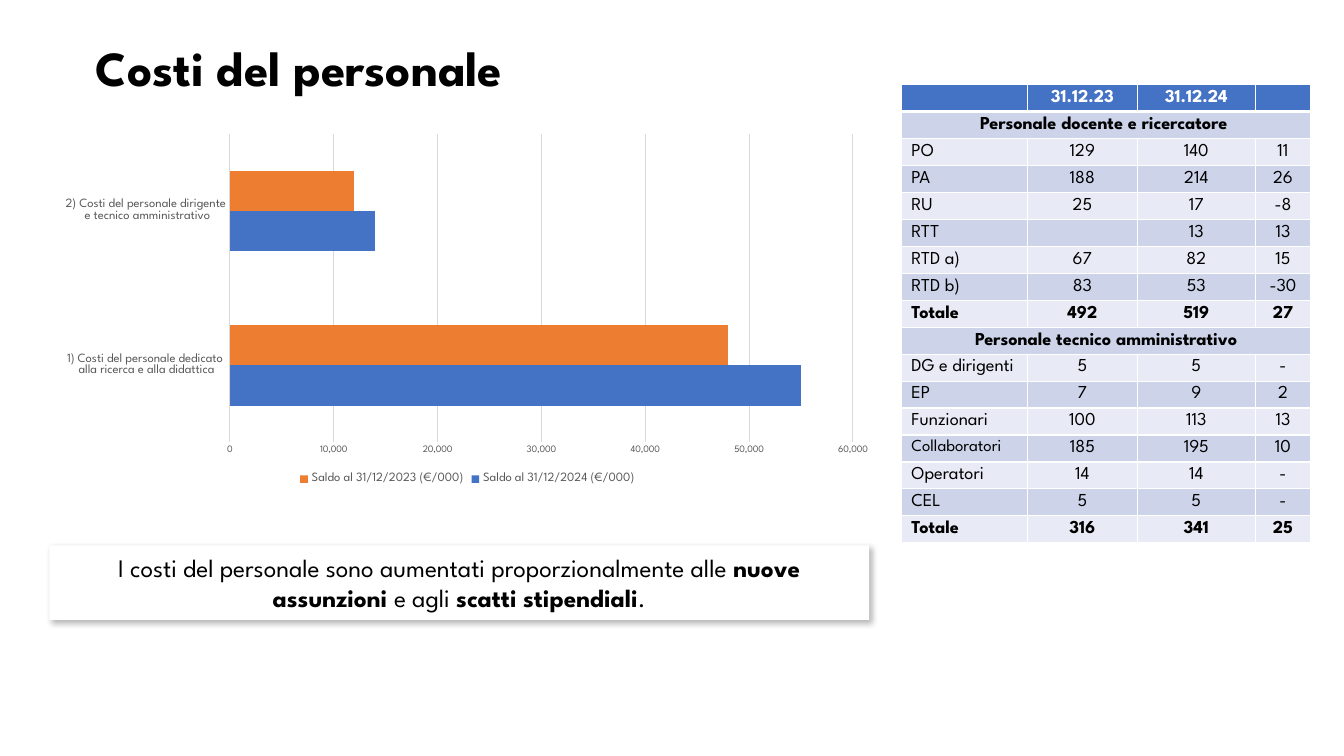
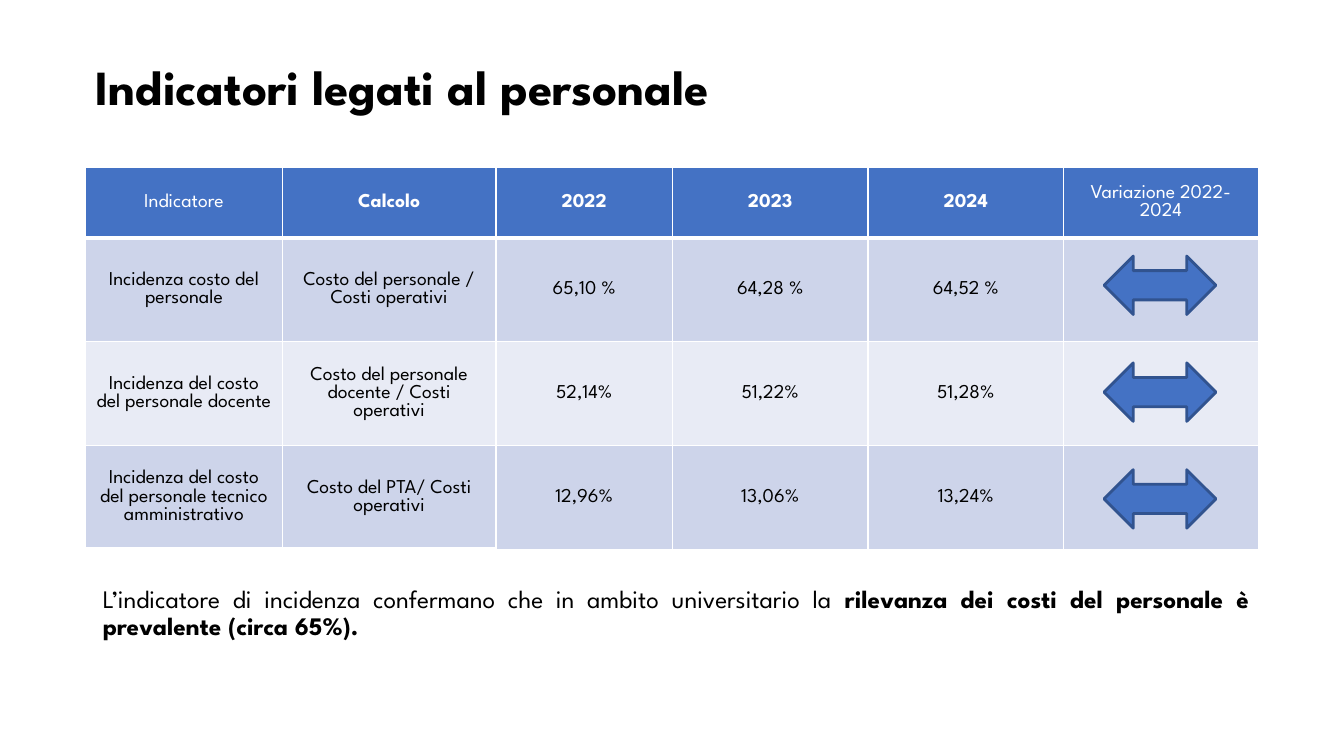
from lxml import etree
from pptx import Presentation
from pptx import util as u
from pptx.chart import data as cd
from pptx.dml import color as dc
from pptx.enum import chart as ec, shapes as es, text as et
from pptx.oxml import ns


class Theme:
    font = "League Spartan"
    black = dc.RGBColor.from_string("000000")
    white = dc.RGBColor.from_string("FFFFFF")
    blue = dc.RGBColor.from_string("4472C4")
    navy = dc.RGBColor.from_string("31538F")
    orange = dc.RGBColor.from_string("ED7D31")
    bands = [dc.RGBColor.from_string(c) for c in ("E8EBF5", "CDD4EA")]
    gray = dc.RGBColor.from_string("595959")
    rule = dc.RGBColor.from_string("D9D9D9")
    title, body, cell, small, label, tick = 35, 18, 14, 13, 9, 7


PX = u.Inches(1) // 100


def style(font, size, color=Theme.black, bold=None):
    font.name, font.size, font.bold = Theme.font, u.Pt(size), bold
    font.color.rgb = color


def grid(slide, left, top, widths, heights, rows, size, strong, mid):
    table = slide.shapes.add_table(
        len(rows), len(widths), left * PX, top * PX,
        sum(widths) * PX, sum(heights) * PX).table
    for col, width in zip(table.columns, widths):
        col.width = width * PX
    for r, row in enumerate(rows):
        table.rows[r].height = heights[r] * PX
        for c in range(len(widths)):
            cell = table.cell(r, c)
            cell.fill.solid()
            cell.fill.fore_color.rgb = Theme.bands[r % 2] if r else Theme.blue
            if mid:
                cell.vertical_anchor = et.MSO_ANCHOR.MIDDLE
            if r == 0 or (mid and r == len(rows) - 1 and c < 2):
                edge = etree.Element(ns.qn("a:lnB"), w=str(u.Pt(3)))
                paint = etree.SubElement(edge, ns.qn("a:solidFill"))
                etree.SubElement(paint, ns.qn("a:srgbClr"), val=str(Theme.white))
                cell._tc.tcPr.insert(0, edge)
            para = cell.text_frame.paragraphs[0]
            para.text = row[c] if c < len(row) else ""
            if mid or c or r == 0 or len(row) == 1:
                para.alignment = et.PP_ALIGN.CENTER
            fit = 12 if para.text == "Collaboratori" else size
            style(para.font, fit, Theme.white if r == 0 else Theme.black,
                  strong(r, c))
            if not para.text:
                etree.SubElement(para._p, ns.qn("a:endParaRPr"), sz=str(size * 100))
        if len(row) == 1:
            table.cell(r, 0).merge(table.cell(r, len(widths) - 1))


prs = Presentation()
prs.slide_width, prs.slide_height = 1333 * PX, 750 * PX

slides = []
for name, top in (("Costi del personale", 38), ("Indicatori legati al personale", 57)):
    slide = prs.slides.add_slide(prs.slide_layouts[5])
    title = slide.shapes.title
    title.left, title.top, title.width, title.height = (
        n * PX for n in (85, top, 1165, 109))
    frame = title.text_frame
    frame.text = name
    frame.auto_size = et.MSO_AUTO_SIZE.NONE
    frame.vertical_anchor = et.MSO_ANCHOR.TOP
    para = frame.paragraphs[0]
    para.alignment = et.PP_ALIGN.LEFT
    para.line_spacing = u.Pt(37.5)
    style(para.font, Theme.title, bold=True)
    slides.append(slide)
costs, ratios = slides

note = costs.shapes.add_shape(
    es.MSO_SHAPE.RECTANGLE, 49 * PX, 541 * PX, 813 * PX, 74 * PX)
note.fill.solid()
note.fill.fore_color.rgb = Theme.white
note.line.fill.background()
note.shadow.inherit = False
shade = etree.SubElement(
    note._element.spPr.find(ns.qn("a:effectLst")), ns.qn("a:outerShdw"),
    blurRad=str(u.Pt(4.5)), dist=str(u.Pt(2.6)), dir=str(53 * 60000),
    algn="tl", rotWithShape="0")
tint = etree.SubElement(shade, ns.qn("a:srgbClr"), val="000000")
etree.SubElement(tint, ns.qn("a:alpha"), val="27000")
note.text_frame.vertical_anchor = et.MSO_ANCHOR.MIDDLE

claim = ratios.shapes.add_textbox(73 * PX, 572 * PX, 1176 * PX, 75 * PX)
frame = claim.text_frame
frame.margin_left = 29 * PX
frame.margin_top = frame.margin_right = frame.margin_bottom = 10 * PX

for box, align, space, parts in (
    (note, et.PP_ALIGN.CENTER, 21.5, (
        "I costi del personale sono aumentati proporzionalmente alle ",
        "nuove assunzioni ", "e agli ", "scatti stipendiali", ".")),
    (claim, et.PP_ALIGN.JUSTIFY, 19.3, (
        "L’indicatore di incidenza confermano che in ambito universitario la ",
        "rilevanza dei costi del personale è prevalente (circa 65%).")),
):
    box.text_frame.word_wrap = True
    para = box.text_frame.paragraphs[0]
    para.alignment, para.line_spacing = align, u.Pt(space)
    for i, part in enumerate(parts):
        run = para.add_run()
        run.text = part
        style(run.font, Theme.body, bold=i % 2 == 1)

staff = [
    ("", "31.12.23", "31.12.24", ""),
    ("Personale docente e ricercatore ",),
    ("PO", "129", "140", "11"),
    ("PA", "188", "214", "26"),
    ("RU", "25", "17", "-8"),
    ("RTT", "", "13", "13"),
    ("RTD a)", "67", "82", "15"),
    ("RTD b)", "83", "53", "-30"),
    ("Totale", "492", "519", "27"),
    ("Personale tecnico amministrativo",),
    ("DG e dirigenti", "5", "5", "-"),
    ("EP", "7", "9", "2"),
    ("Funzionari", "100", "113", "13"),
    ("Collaboratori", "185", "195", "10"),
    ("Operatori", "14", "14", "-"),
    ("CEL", "5", "5", "-"),
    ("Totale", "316", "341", "25"),
]
grid(costs, 894, 84, [125, 109, 117, 55], [26] * len(staff), staff, Theme.small,
     lambda r, c: r == 0 or len(staff[r]) == 1 or staff[r][0] == "Totale", False)

data = cd.CategoryChartData(number_format="#,##0")
data.categories = [
    "1) Costi del personale dedicato \nalla ricerca e alla didattica",
    "2) Costi del personale dirigente\n e tecnico amministrativo"]
data.add_series("Saldo al 31/12/2024 (€/000)", (55000, 14000))
data.add_series("Saldo al 31/12/2023 (€/000)", (48000, 12000))
wide, high = 829, 359
chart = costs.shapes.add_chart(
    ec.XL_CHART_TYPE.BAR_CLUSTERED, 49 * PX, 126 * PX, wide * PX, high * PX, data).chart
style(chart.font, 10)
chart.has_title = False
chart.has_legend = True
chart.legend.position = ec.XL_LEGEND_POSITION.BOTTOM
chart.legend.include_in_layout = False
style(chart.legend.font, Theme.label, Theme.gray)
plot = chart.plots[0]
plot.gap_width, plot.overlap, plot.vary_by_categories = 182, 0, False
for bar, color in zip(plot.series, (Theme.blue, Theme.orange)):
    bar.format.fill.solid()
    bar.format.fill.fore_color.rgb = color
cats, vals = chart.category_axis, chart.value_axis
for axis, size in ((cats, Theme.label), (vals, Theme.tick)):
    axis.major_tick_mark = axis.minor_tick_mark = ec.XL_TICK_MARK.NONE
    style(axis.tick_labels.font, size, Theme.gray)
vals.minimum_scale, vals.maximum_scale, vals.major_unit = 0, 60000, 10000
vals.tick_labels.number_format = "#,##0"
vals.tick_labels.number_format_is_linked = False
vals.format.line.fill.background()
vals.has_major_gridlines = True
for line in (cats.format.line, vals.major_gridlines.format.line):
    line.color.rgb, line.width = Theme.rule, u.Pt(0.75)
area = plot._element.getparent()
for old in area.findall(ns.qn("c:layout")):
    area.remove(old)
layout = etree.Element(ns.qn("c:layout"))
area.insert(0, layout)
manual = etree.SubElement(layout, ns.qn("c:manualLayout"))
for tag, val in (("layoutTarget", "inner"), ("xMode", "edge"), ("yMode", "edge"),
                 ("x", 179 / wide), ("y", 7 / high),
                 ("w", 618 / wide), ("h", 306 / high)):
    etree.SubElement(manual, ns.qn("c:" + tag), val=str(val))

shares = [
    ("Indicatore", "Calcolo", "2022", "2023", "2024", "Variazione 2022-2024"),
    ("Incidenza costo del personale", "Costo del personale / Costi operativi",
     "65,10 %", "64,28 %", "64,52 %"),
    ("Incidenza del costo del personale docente",
     "Costo del personale docente / Costi operativi",
     "52,14%", "51,22%", "51,28%"),
    ("Incidenza del costo del personale tecnico amministrativo",
     "Costo del PTA/ Costi operativi", "12,96%", "13,06%", "13,24%"),
]
grid(ratios, 85, 166, [195, 212, 175, 194, 194, 193], [70, 103, 103, 103], shares,
     Theme.cell, lambda r, c: r == 0 and 0 < c < 5, True)

for i in range(3):
    arrow = ratios.shapes.add_shape(
        es.MSO_SHAPE.LEFT_RIGHT_ARROW, 1095 * PX, (254 + 106 * i) * PX,
        111 * PX, 58 * PX)
    arrow.shadow.inherit = False
    arrow.fill.solid()
    arrow.fill.fore_color.rgb = Theme.blue
    arrow.line.color.rgb, arrow.line.width = Theme.navy, u.Pt(2)

prs.save("out.pptx")
